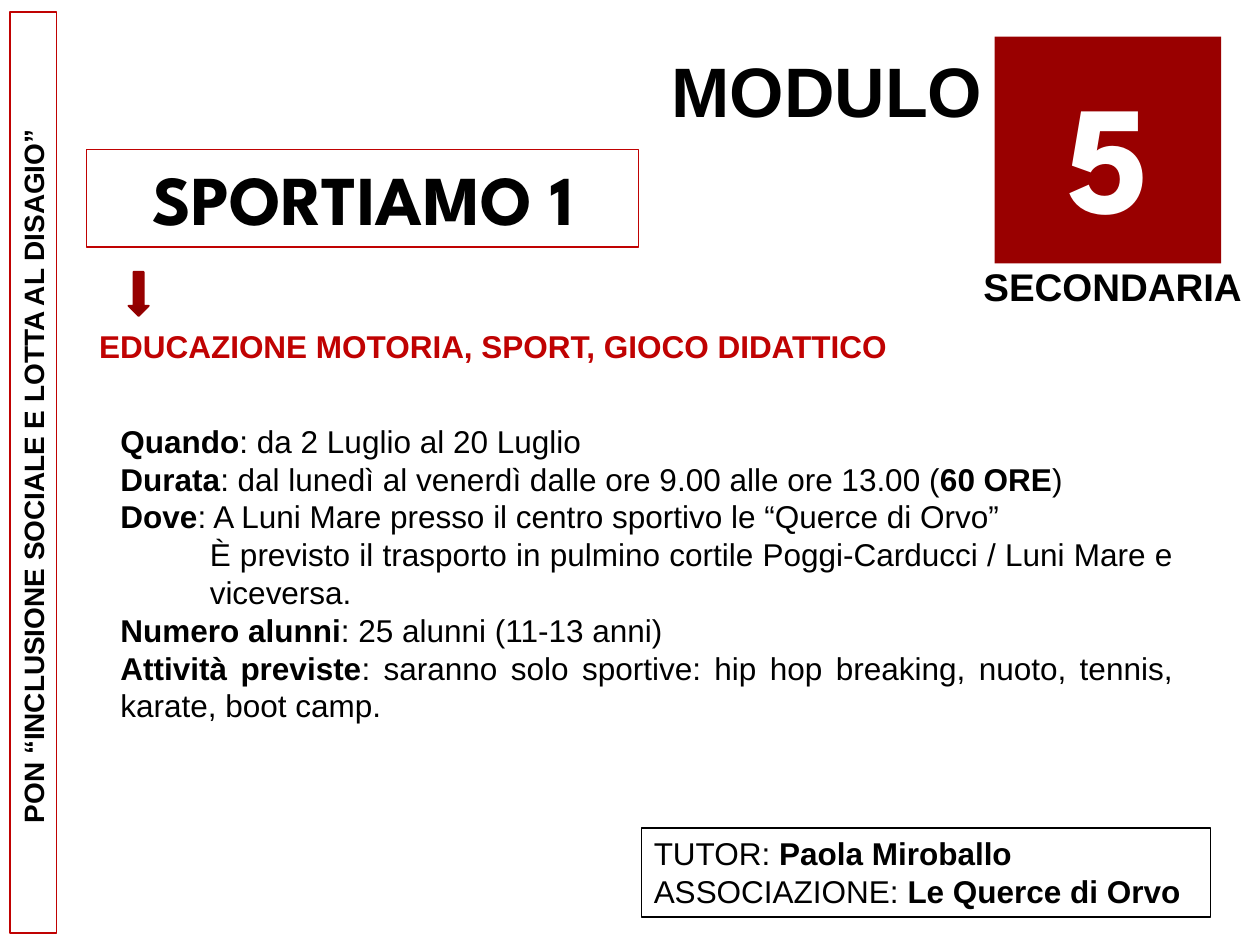
from dataclasses import dataclass

from pptx import Presentation
from pptx.dml.color import RGBColor
from pptx.enum.shapes import MSO_SHAPE
from pptx.enum.text import MSO_ANCHOR, MSO_AUTO_SIZE, PP_ALIGN
from pptx.util import Cm, Pt


@dataclass(frozen=True)
class Theme:
    red: str = "C00202"
    dark_red: str = "990000"
    deep_red: str = "830000"
    edge_red: str = "960000"
    black: str = "000000"
    white: str = "FFFFFF"
    body_font: str = "Arial"
    title_font: str = "League Spartan"
    side: int = 16
    body: int = 18
    level: int = 22
    title: int = 40
    number: int = 88


T = Theme()


def rgb(value):
    return RGBColor.from_string(value)


def add_box(s, box, preset=MSO_SHAPE.RECTANGLE, fill=None, line=None, width=0.75):
    sp = s.shapes.add_shape(preset, *map(Cm, box))
    sp.shadow.inherit = False
    if fill:
        sp.fill.solid()
        sp.fill.fore_color.rgb = rgb(fill)
    else:
        sp.fill.background()
    if line:
        sp.line.color.rgb = rgb(line)
        sp.line.width = Pt(width)
    else:
        sp.line.fill.background()
    return sp


def add_text_box(s, box):
    return s.shapes.add_textbox(*map(Cm, box))


def write(sp, paragraphs, size=T.body, align=PP_ALIGN.LEFT, color=T.black, font=T.body_font):
    tf = sp.text_frame
    tf.word_wrap = True
    tf.auto_size = MSO_AUTO_SIZE.SHAPE_TO_FIT_TEXT
    tf.vertical_anchor = MSO_ANCHOR.TOP
    for i, runs in enumerate(paragraphs):
        p = tf.add_paragraph() if i else tf.paragraphs[0]
        p.alignment = align
        for text, bold in runs:
            r = p.add_run()
            r.text = text
            r.font.name = font
            r.font.size = Pt(size)
            r.font.bold = bold
            r.font.color.rgb = rgb(color)
    return tf


def add_side_banner(s, x, y, w, h):
    sp = add_box(s, (x + (w - h) / 2, y + (h - w) / 2, h, w), line=T.red, width=1)
    sp.rotation = 270
    write(sp, [[("PON “INCLUSIONE SOCIALE E LOTTA AL DISAGIO” ", True)]],
          T.side, PP_ALIGN.CENTER)


def add_module_badge(s, x, y, w, h):
    square = 4.57
    left = x + 7.12
    add_box(s, (left, y, square, square), fill=T.dark_red)
    write(add_text_box(s, (x, y + 0.1, 7.12, 1.96)),
          [[("MODULO", True)]], T.title, PP_ALIGN.RIGHT)
    write(add_text_box(s, (left + 0.3, y + 0.33, square - 0.6, 4.01)),
          [[("5", True)]], T.number, PP_ALIGN.CENTER, T.white, T.title_font)
    write(add_text_box(s, (x + w - 5.94, y + h - 1.19, 5.94, 1.19)),
          [[("SECONDARIA", True)]], T.level, PP_ALIGN.CENTER)


def add_heading(s, x, y, w, h):
    write(add_box(s, (x, y, 11.13, 1.96), line=T.red),
          [[("SPORTIAMO 1", True)]], T.title, PP_ALIGN.CENTER, font=T.title_font)
    write(add_text_box(s, (x, y + h - 1.02, w, 1.02)),
          [[("EDUCAZIONE MOTORIA, SPORT, GIOCO DIDATTICO", True)]], color=T.red)
    arrow = add_box(s, (x + 0.84, y + 2.46, 0.41, 0.89), MSO_SHAPE.DOWN_ARROW,
                    line=T.edge_red, width=1)
    arrow.fill.gradient()
    arrow.fill.gradient_angle = 90
    stops = ((0, T.deep_red), (0.35, T.dark_red))
    for stop, (position, color) in zip(arrow.fill.gradient_stops, stops):
        stop.position = position
        stop.color.rgb = rgb(color)


def add_details(s, x, y, w, h):
    tf = write(add_text_box(s, (x, y, w, h)), [
        [("Quando", True), (": da 2 Luglio al 20 Luglio ", False)],
        [("Durata", True), (": dal lunedì al venerdì dalle ore 9.00 alle ore 13.00 (", False),
         ("60 ORE", True), (")", False)],
        [("Dove", True), (": A Luni Mare presso il centro sportivo le “Querce di Orvo”", False)],
        [("È previsto il trasporto in pulmino cortile Poggi-Carducci / Luni Mare e viceversa.",
          False)],
        [("Numero alunni", True), (": 25 alunni (11-13 anni)", False)],
        [("Attività previste", True),
         (": saranno solo sportive: hip hop breaking, nuoto, tennis, karate, boot camp.", False)],
    ], align=PP_ALIGN.JUSTIFY)
    transport = tf.paragraphs[3]
    transport._p.get_or_add_pPr().set("marL", str(Cm(1.8)))


def add_tutor(s, x, y, w, h):
    write(add_box(s, (x, y, w, h), line=T.black), [
        [("TUTOR: ", False), ("Paola Miroballo", True)],
        [("ASSOCIAZIONE: ", False), ("Le Querce di Orvo", True)],
    ])


def main():
    prs = Presentation()
    prs.slide_width, prs.slide_height = Cm(25.4), Cm(19.05)
    s = prs.slides.add_slide(prs.slide_layouts[6])
    add_module_badge(s, 12.93, 0.74, 12.47, 5.63)
    add_side_banner(s, 0.2, 0.24, 0.94, 18.57)
    add_heading(s, 1.75, 3.02, 17.73, 4.47)
    add_details(s, 2.18, 8.38, 21.72, 6.4)
    add_tutor(s, 12.93, 16.69, 11.48, 1.8)
    prs.save("out.pptx")


if __name__ == "__main__":
    main()
